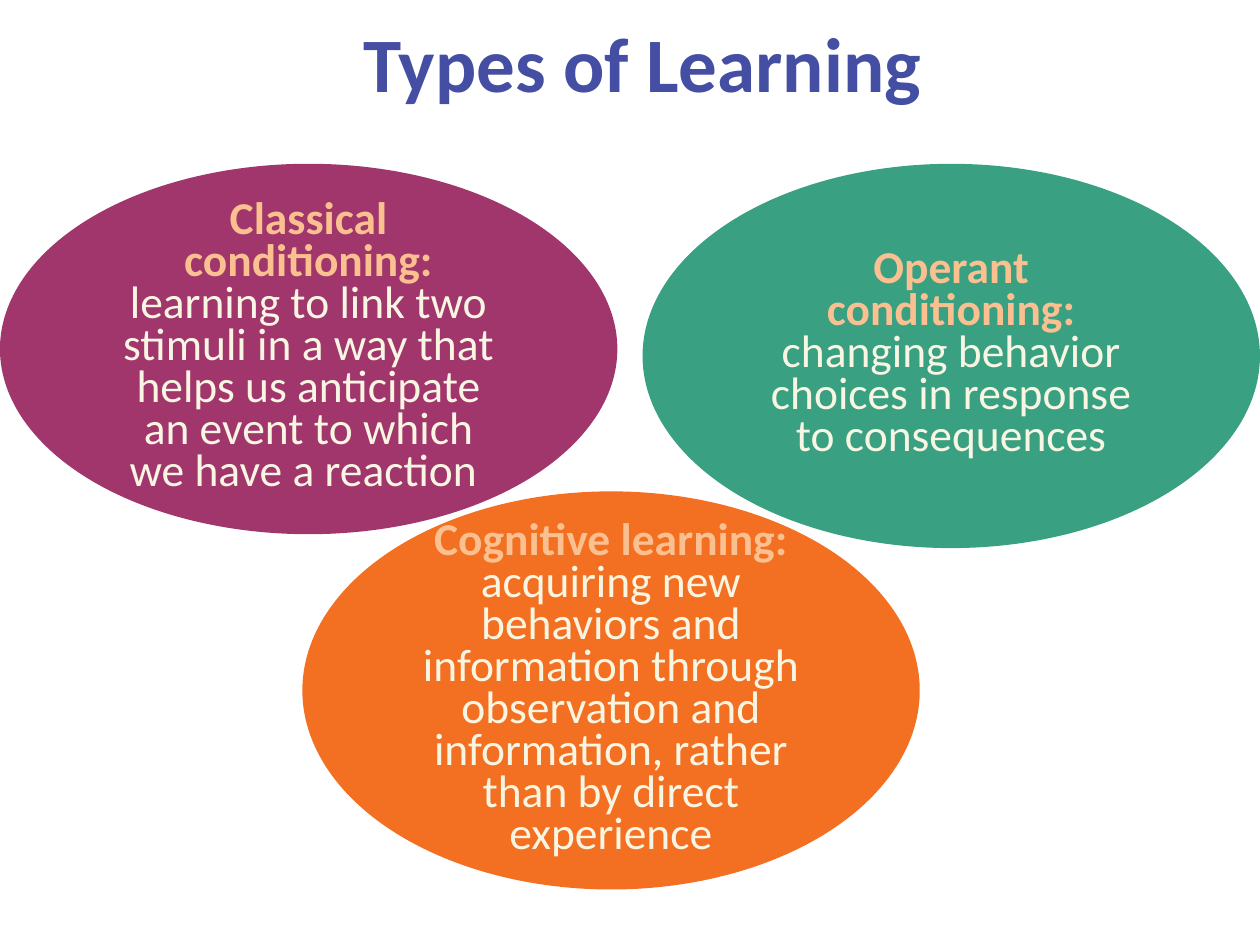
from pptx import Presentation
from pptx.dml.color import RGBColor
from pptx.enum.shapes import MSO_SHAPE
from pptx.enum.text import MSO_ANCHOR, MSO_AUTO_SIZE, PP_ALIGN
from pptx.util import Inches, Pt

ELLIPSE = MSO_SHAPE.OVAL
MIDDLE = MSO_ANCHOR.MIDDLE
CENTER = PP_ALIGN.CENTER
NO_AUTOFIT = MSO_AUTO_SIZE.NONE

TITLE_ONLY = 5
SLIDE_WIDTH, SLIDE_HEIGHT = 10, 7.5
FONT = "Calibri"
TITLE_COLOR = "444EA2"
TERM_COLOR = "FAC090"
MEANING_COLOR = "F8F6E3"

ELLIPSE_WIDTH = 0.49 * SLIDE_WIDTH
TOP_ROW = 1.3
# left, top, height, fill, term, meaning
LEARNING_TYPES = [
    (0, TOP_ROW, 2.94, "A0366C", "Classical conditioning: ",
     "learning to link two stimuli in a way that helps us anticipate "
     "an event to which we have a reaction "),
    (SLIDE_WIDTH - ELLIPSE_WIDTH, TOP_ROW, 3.05, "3AA082", "Operant conditioning: ",
     "changing behavior choices in response to consequences"),
    (0.24 * SLIDE_WIDTH, 0.52 * SLIDE_HEIGHT, 3.16, "F36F21", "Cognitive learning: ",
     "acquiring new behaviors and information through observation "
     "and information, rather than by direct experience"),
]


def color(hex_code):
    return RGBColor.from_string(hex_code)


def place(shape, left, top, width, height):
    shape.left, shape.top = Inches(left), Inches(top)
    shape.width, shape.height = Inches(width), Inches(height)


def set_frame(frame, left, top, right, bottom):
    """Wrap and centre the text vertically, with insets in inches."""
    frame.word_wrap = True
    frame.auto_size = NO_AUTOFIT
    frame.vertical_anchor = MIDDLE
    frame.margin_left, frame.margin_top = Inches(left), Inches(top)
    frame.margin_right, frame.margin_bottom = Inches(right), Inches(bottom)


def write_centered(para, line_points, size, spans):
    """Fill a paragraph with (text, colour, bold) spans."""
    para.alignment = CENTER
    para.line_spacing = Pt(line_points)
    para.space_before = para.space_after = Pt(0)
    for text, hex_code, bold in spans:
        span = para.add_run()
        span.text = text
        span.font.name = FONT
        span.font.size = Pt(size)
        span.font.bold = bold
        span.font.color.rgb = color(hex_code)


def add_title(page, text):
    title = page.shapes.title
    place(title, 0, 0, SLIDE_WIDTH, 0.15 * SLIDE_HEIGHT)
    set_frame(title.text_frame, 0.3, 0.05, 0.1, 0.05)
    write_centered(title.text_frame.paragraphs[0], 42, 44,
                   [(text, TITLE_COLOR, True)])


def add_learning_type(page, left, top, height, fill, term, meaning):
    ellipse = page.shapes.add_shape(ELLIPSE, Inches(left), Inches(top),
                                    Inches(ELLIPSE_WIDTH), Inches(height))
    ellipse.shadow.inherit = False
    ellipse.fill.solid()
    ellipse.fill.fore_color.rgb = color(fill)
    ellipse.line.fill.background()
    set_frame(ellipse.text_frame, 0.2, 0.2, 0.2, 0.2)
    write_centered(ellipse.text_frame.paragraphs[0], 24, 26,
                   [(term, TERM_COLOR, True), (meaning, MEANING_COLOR, False)])


def main():
    deck = Presentation()
    deck.slide_width, deck.slide_height = Inches(SLIDE_WIDTH), Inches(SLIDE_HEIGHT)
    page = deck.slides.add_slide(deck.slide_layouts[TITLE_ONLY])
    add_title(page, "Types of Learning")
    for learning_type in LEARNING_TYPES:
        add_learning_type(page, *learning_type)
    deck.save("out.pptx")


if __name__ == "__main__":
    main()
